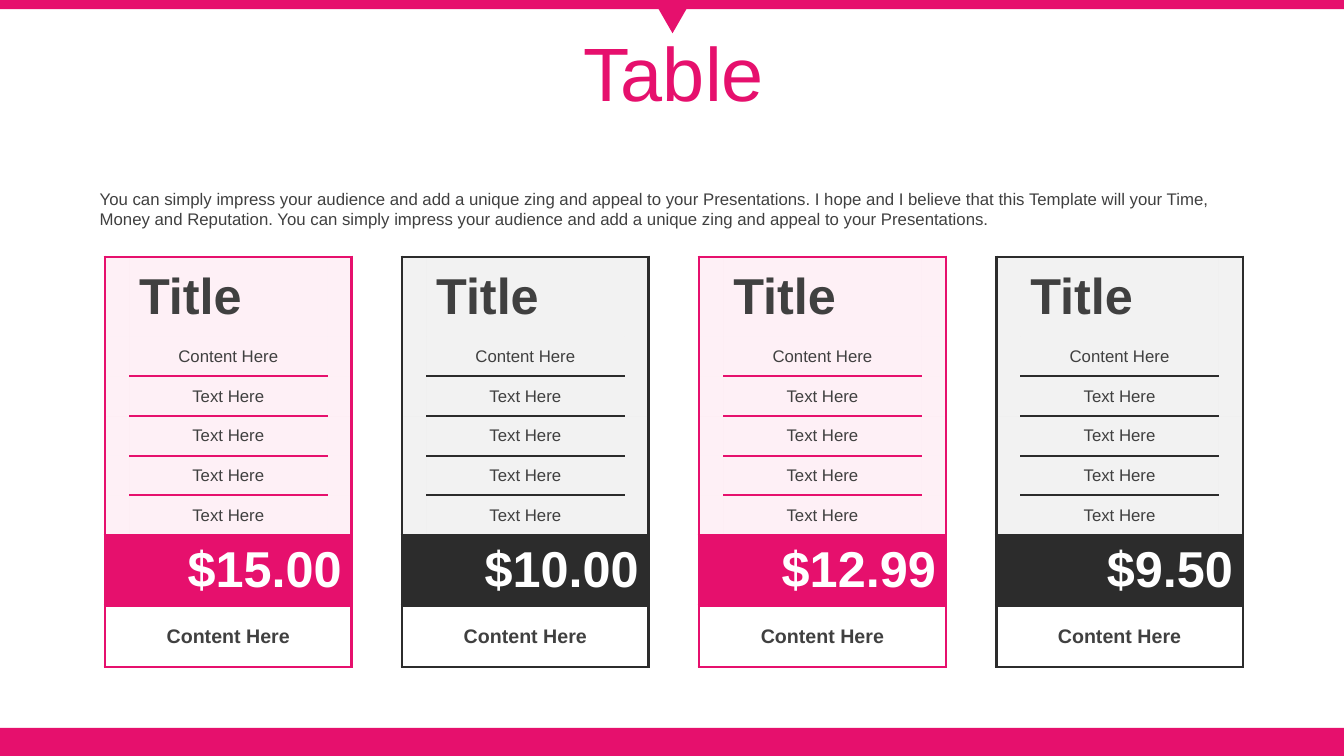
"""Build a slide with four pricing tables under a centred title."""
from lxml import etree
from pptx import Presentation
from pptx.dml.color import RGBColor
from pptx.enum.shapes import MSO_SHAPE
from pptx.enum.text import MSO_ANCHOR, MSO_AUTO_SIZE, PP_ALIGN
from pptx.oxml.ns import qn
from pptx.util import Inches, Pt

RECTANGLE, TRIANGLE = MSO_SHAPE.RECTANGLE, MSO_SHAPE.ISOSCELES_TRIANGLE
LEFT, CENTER, RIGHT = PP_ALIGN.LEFT, PP_ALIGN.CENTER, PP_ALIGN.RIGHT
MIDDLE = MSO_ANCHOR.MIDDLE
NO_AUTOFIT = MSO_AUTO_SIZE.NONE

PINK = RGBColor(0xE6, 0x10, 0x6D)
PALE_PINK = RGBColor(0xFC, 0xCE, 0xE2)
BLACK = RGBColor(0x2C, 0x2C, 0x2C)
PALE_GRAY = RGBColor(0xD5, 0xD5, 0xD5)
TEXT_GRAY = RGBColor(0x40, 0x40, 0x40)
WHITE = RGBColor(0xFF, 0xFF, 0xFF)
FONT = "Arial"

TITLE = "Table"
INTRO = (
    "You can simply impress your audience and add a unique zing and appeal to your "
    "Presentations. I hope and I believe that this Template will your Time, Money and "
    "Reputation. You can simply impress your audience and add a unique zing and appeal "
    "to your Presentations."
)
PLAN_TITLE = "Title"
FEATURES = ["Content Here", "Text Here", "Text Here", "Text Here", "Text Here"]
PLAN_FOOTER = "Content Here"
PLANS = [
    ("$15.00", PINK, PALE_PINK),
    ("$10.00", BLACK, PALE_GRAY),
    ("$12.99", PINK, PALE_PINK),
    ("$9.50", BLACK, PALE_GRAY),
]

SLIDE_WIDTH, SLIDE_HEIGHT = 13.33, 7.5
DECORATIONS = [
    (RECTANGLE, 0, 7.22, SLIDE_WIDTH, 0.28, 0),
    (RECTANGLE, 0, 0, SLIDE_WIDTH, 0.09, 0),
    (TRIANGLE, 6.48, 0, 0.38, 0.33, 180),
]
FIRST_LEFT, LAST_LEFT, TABLE_TOP = 1.04, 9.88, 2.55
TABLE_WIDTH, TABLE_HEIGHT = 2.42, 4.07
MIDDLE_WIDTH = 1.97
TITLE_HEIGHT, PRICE_HEIGHT, FOOTER_HEIGHT = 0.79, 0.7, 0.61
FEATURE_HEIGHT = (TABLE_HEIGHT - TITLE_HEIGHT - PRICE_HEIGHT - FOOTER_HEIGHT) / len(FEATURES)
SIDE_WIDTH = (TABLE_WIDTH - MIDDLE_WIDTH) / 2
COLUMN_WIDTHS = [SIDE_WIDTH, MIDDLE_WIDTH, SIDE_WIDTH]
ROW_HEIGHTS = [TITLE_HEIGHT, *[FEATURE_HEIGHT] * len(FEATURES), PRICE_HEIGHT, FOOTER_HEIGHT]
PRICE_ROW = len(FEATURES) + 1
FOOTER_ROW = PRICE_ROW + 1
FRAME, FEATURE_RULE, PRICE_RULE = 2.25, 1.5, 3
TINT_ALPHA = 30


def write(paragraph, text, size, color, alignment=LEFT, bold=False):
    paragraph.alignment = alignment
    run = paragraph.add_run()
    run.text = text
    run.font.name = FONT
    run.font.size = Pt(size)
    run.font.bold = bold
    run.font.color.rgb = color


def rule_above(row, column):
    if row == FOOTER_ROW:
        return PRICE_RULE
    if row in (0, PRICE_ROW, FOOTER_ROW + 1):
        return FRAME
    return FEATURE_RULE if column == 1 and row > 1 else 0


def style_cell(cell, row, column, accent, tint):
    cell.vertical_anchor = MIDDLE
    cell.margin_top = cell.margin_bottom = 0
    cell.fill.solid()
    colors = {PRICE_ROW: accent, FOOTER_ROW: WHITE}
    cell.fill.fore_color.rgb = colors.get(row, tint)
    properties = cell._tc.get_or_add_tcPr()
    if row < PRICE_ROW:
        color = properties.find(qn("a:solidFill"))[0]
        etree.SubElement(color, qn("a:alpha"), val=str(TINT_ALPHA * 1000))

    borders = {
        "a:lnL": FRAME if column == 0 else 0,
        "a:lnR": FRAME if column == 2 or cell.is_merge_origin else 0,
        "a:lnT": rule_above(row, column),
        "a:lnB": rule_above(row + 1, column),
    }
    for position, (tag, width) in enumerate(borders.items()):
        line = etree.Element(qn(tag), w=str(int(Pt(width))))
        if width:
            fill = etree.SubElement(line, qn("a:solidFill"))
            etree.SubElement(fill, qn("a:srgbClr"), val=str(accent))
        else:
            etree.SubElement(line, qn("a:noFill"))
        properties.insert(position, line)


def add_plan(slide, left, price, accent, tint):
    table = slide.shapes.add_table(
        len(ROW_HEIGHTS), len(COLUMN_WIDTHS), Inches(left), Inches(TABLE_TOP),
        Inches(TABLE_WIDTH), Inches(TABLE_HEIGHT),
    ).table
    table.first_row = table.horz_banding = False
    for column, width in zip(table.columns, COLUMN_WIDTHS):
        column.width = Inches(width)
    for row, height in zip(table.rows, ROW_HEIGHTS):
        row.height = Inches(height)
    for row in (PRICE_ROW, FOOTER_ROW):
        table.cell(row, 0).merge(table.cell(row, 2))
    for row in range(len(ROW_HEIGHTS)):
        for column in range(len(COLUMN_WIDTHS)):
            style_cell(table.cell(row, column), row, column, accent, tint)

    entries = [(0, 1, PLAN_TITLE, 36, TEXT_GRAY, LEFT, True)]
    for row, feature in enumerate(FEATURES, start=1):
        entries.append((row, 1, feature, 12, TEXT_GRAY, CENTER, False))
    entries.append((PRICE_ROW, 0, price, 36, WHITE, RIGHT, True))
    entries.append((FOOTER_ROW, 0, PLAN_FOOTER, 14, TEXT_GRAY, CENTER, True))
    for row, column, *text_format in entries:
        write(table.cell(row, column).text_frame.paragraphs[0], *text_format)


def main():
    presentation = Presentation()
    presentation.slide_width = Inches(SLIDE_WIDTH)
    presentation.slide_height = Inches(SLIDE_HEIGHT)
    slide = presentation.slides.add_slide(presentation.slide_layouts[5])

    for kind, left, top, width, height, rotation in DECORATIONS:
        shape = slide.shapes.add_shape(
            kind, Inches(left), Inches(top), Inches(width), Inches(height)
        )
        shape.rotation = rotation
        shape.shadow.inherit = False
        shape.fill.solid()
        shape.fill.fore_color.rgb = PINK
        shape.line.fill.background()

    title = slide.shapes.title
    title.left, title.top = Inches(0.35), Inches(0.37)
    title.width, title.height = Inches(12.66), Inches(0.79)
    title.text_frame.auto_size = NO_AUTOFIT
    title.text_frame.vertical_anchor = MIDDLE
    title_paragraph = title.text_frame.paragraphs[0]
    title_paragraph.line_spacing = 0.9
    write(title_paragraph, TITLE, 54, PINK, CENTER)

    step = (LAST_LEFT - FIRST_LEFT) / (len(PLANS) - 1)
    for index, plan in enumerate(PLANS):
        add_plan(slide, FIRST_LEFT + index * step, *plan)

    intro = slide.shapes.add_textbox(Inches(0.89), Inches(1.82), Inches(11.45), Inches(0.5))
    intro.text_frame.word_wrap = True
    write(intro.text_frame.paragraphs[0], INTRO, 12, TEXT_GRAY)

    presentation.save("out.pptx")


if __name__ == "__main__":
    main()
